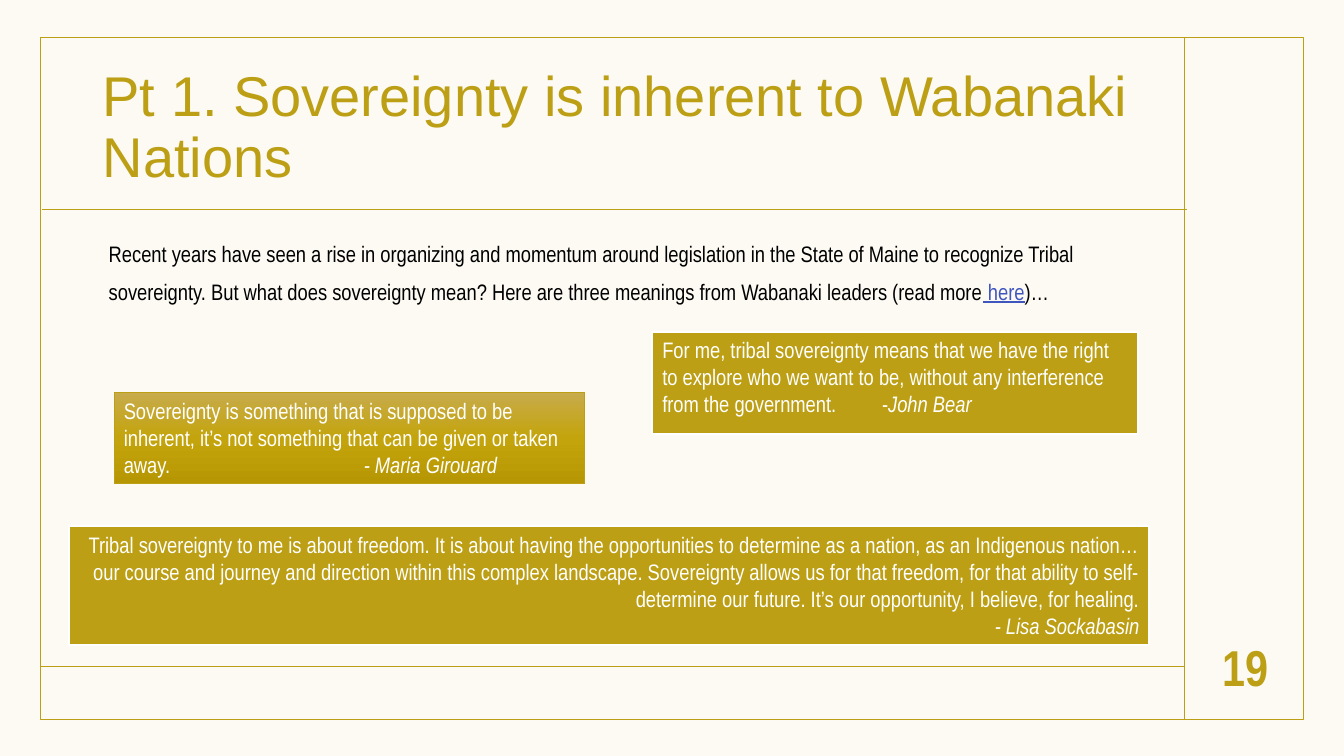
"""Build the slide on the meaning of Wabanaki sovereignty."""
from copy import deepcopy
from dataclasses import dataclass

from lxml.etree import SubElement
from pptx import Presentation
from pptx.dml.color import RGBColor
from pptx.enum.shapes import MSO_CONNECTOR as Conn, MSO_SHAPE as Form
from pptx.enum.text import MSO_ANCHOR as Anchor, PP_ALIGN as Align
from pptx.oxml.ns import qn
from pptx.util import Inches, Pt

GOLD, WHITE, BLACK, BLUE, CREAM = "BC9F14", "FFFFFF", "000000", "3F56BF", "FCFAF3"
SHADES = [(0, "C7AB4C"), (0.5, "C4A40C"), (1, "B69703")]


@dataclass
class Run:
    text: str
    slant: bool = False
    link: bool = False


@dataclass
class Box:
    at: tuple[float, float, float, float]
    runs: list[Run]
    ink: str = WHITE
    size: int = 16
    face: str = "Arial Narrow"
    bold: bool = False
    space: float = 1
    align: Align = Align.LEFT
    anchor: Anchor = Anchor.TOP
    tab: float = 0


@dataclass
class Quote(Box):
    edge: str = WHITE
    width: float = 1.5
    shaded: bool = False


TEXTS = [
    Box((0.92, 0.6, 10.42, 1.36),
        [Run("Pt 1. Sovereignty is inherent to Wabanaki Nations")],
        GOLD, 40, "Arial", space=0.9, anchor=Anchor.MIDDLE),
    Box((0.98, 2.23, 10.42, 1.48),
        [Run("Recent years have seen a rise in organizing and momentum around "
             "legislation in the State of Maine to recognize Tribal sovereignty. "
             "But what does sovereignty mean? Here are three meanings from "
             "Wabanaki leaders (read more"),
         Run(" here", link=True), Run(")…")],
        BLACK, space=1.4),
    Box((11.83, 6.2, 1.04, 0.83), [Run("19")], GOLD, 36, bold=True,
        align=Align.CENTER, anchor=Anchor.MIDDLE),
]
QUOTES = [
    Quote((6.47, 3.29, 4.82, 1.02),
          [Run("For me, tribal sovereignty means that we have the right to explore "
               "who we want to be, without any interference from the government.\t-"),
           Run("John Bear", slant=True)], tab=2.18),
    Quote((1.13, 3.89, 4.67, 0.91),
          [Run("Sovereignty is something that is supposed to be inherent, it’s not "
               "something that can be given or taken away.\t"),
           Run("- Maria Girouard", slant=True)],
          tab=2.38, edge=GOLD, width=0.5, shaded=True),
    Quote((0.68, 5.22, 10.72, 1.18),
          [Run("Tribal sovereignty to me is about freedom. It is about having the "
               "opportunities to determine as a nation, as an Indigenous nation…our "
               "course and journey and direction within this complex landscape. "
               "Sovereignty allows us for that freedom, for that ability to "
               "self-determine our future. It’s our opportunity, I believe, for "
               "healing.\v"),
           Run("- Lisa Sockabasin", slant=True)], align=Align.RIGHT),
]
RULES = [(11.75, 0.37, 11.75, 7.13), (0.41, 6.61, 11.75, 6.61), (0.42, 2.08, 11.77, 2.08)]


def tint(code: str) -> RGBColor:
    return RGBColor.from_string(code)


def write(shape, box: Box) -> None:
    frame = shape.text_frame
    frame.word_wrap = True
    frame.vertical_anchor = box.anchor
    para = frame.paragraphs[0]
    para.alignment, para.line_spacing = box.align, box.space
    if box.tab:
        stops = SubElement(para._p.get_or_add_pPr(), qn("a:tabLst"))
        SubElement(stops, qn("a:tab"), pos=str(Inches(box.tab)), algn="l")
    font = para.font
    font.name, font.size, font.bold = box.face, Pt(box.size), box.bold
    font.color.rgb = tint(box.ink)
    for part in box.runs:
        pieces = part.text.split("\v")
        for i, piece in enumerate(pieces):
            if i:
                para.add_line_break()
            if not piece:
                continue
            run = para.add_run()
            run.text = piece
            if part.slant:
                run.font.italic = True
            if part.link:
                run.font.underline = True
                run.font.color.rgb = tint(BLUE)


def block(slide, at: tuple[float, ...], edge: str, width: float):
    shape = slide.shapes.add_shape(Form.RECTANGLE, *map(Inches, at))
    shape.shadow.inherit = False
    shape.line.color.rgb = tint(edge)
    shape.line.width = Pt(width)
    return shape


def shade(shape) -> None:
    fill = shape.fill
    fill.gradient()
    fill.gradient_angle = 270
    stops = shape._element.spPr.find(qn("a:gradFill")).find(qn("a:gsLst"))
    stops.append(deepcopy(stops[0]))
    for stop, (pos, code) in zip(fill.gradient_stops, SHADES):
        stop.position = pos
        stop.color.rgb = tint(code)


def quote(slide, item: Quote) -> None:
    shape = block(slide, item.at, item.edge, item.width)
    if item.shaded:
        shade(shape)
    else:
        shape.fill.solid()
        shape.fill.fore_color.rgb = tint(GOLD)
    write(shape, item)


def rule(slide, ends: tuple[float, ...]) -> None:
    line = slide.shapes.add_connector(Conn.STRAIGHT, *map(Inches, ends))
    line.line.color.rgb = tint(GOLD)
    line.line.width = Pt(1)
    SubElement(line._element.spPr, qn("a:effectLst"))


def main() -> None:
    deck = Presentation()
    deck.slide_width, deck.slide_height = Inches(13.33), Inches(7.5)
    slide = deck.slides.add_slide(deck.slide_layouts[6])
    back = slide.background.fill
    back.solid()
    back.fore_color.rgb = tint(CREAM)
    block(slide, (0.4, 0.37, 12.53, 6.77), GOLD, 1).fill.background()
    for ends in RULES:
        rule(slide, ends)
    for box in TEXTS:
        write(slide.shapes.add_textbox(*map(Inches, box.at)), box)
    for item in QUOTES:
        quote(slide, item)
    deck.save("out.pptx")


if __name__ == "__main__":
    main()
